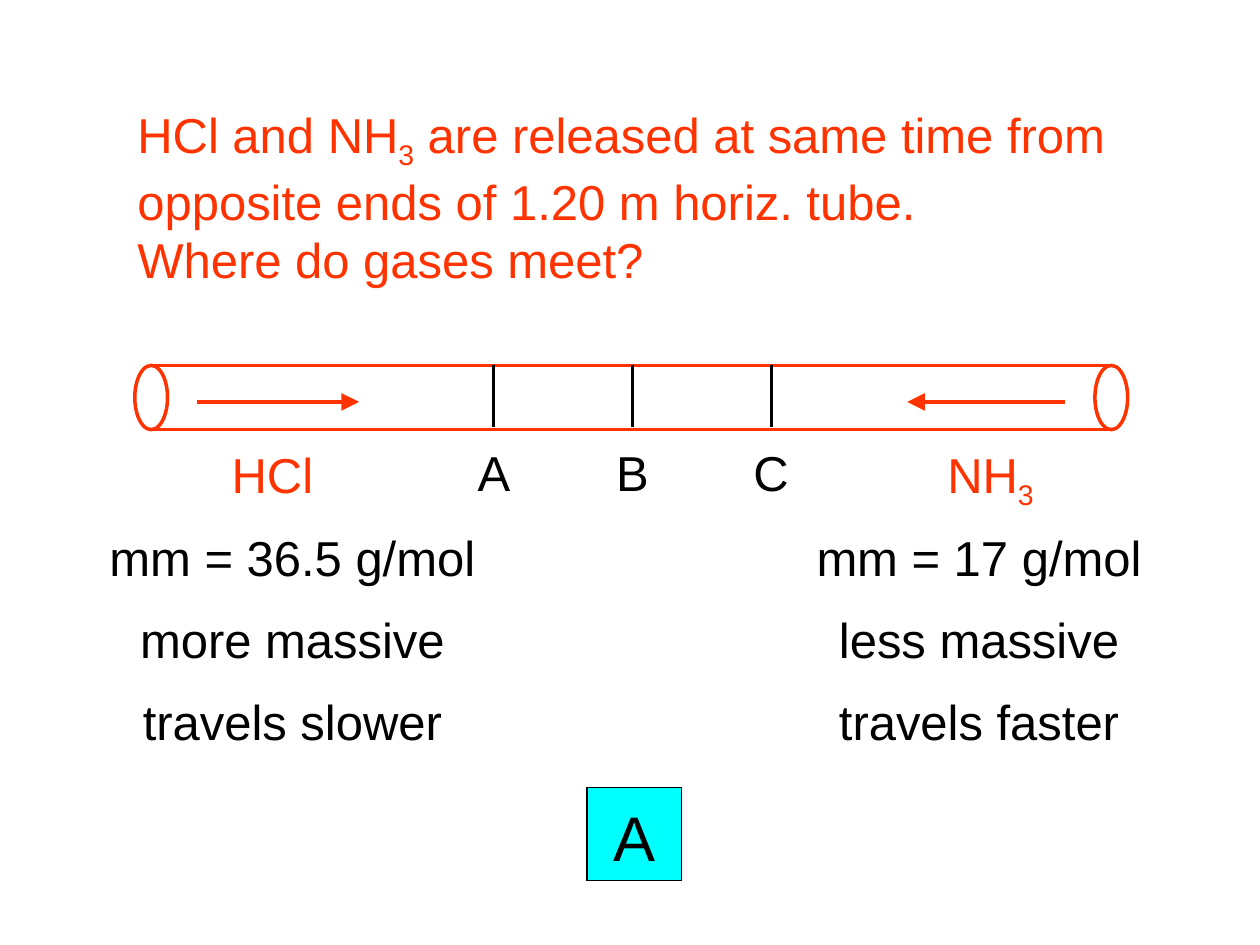
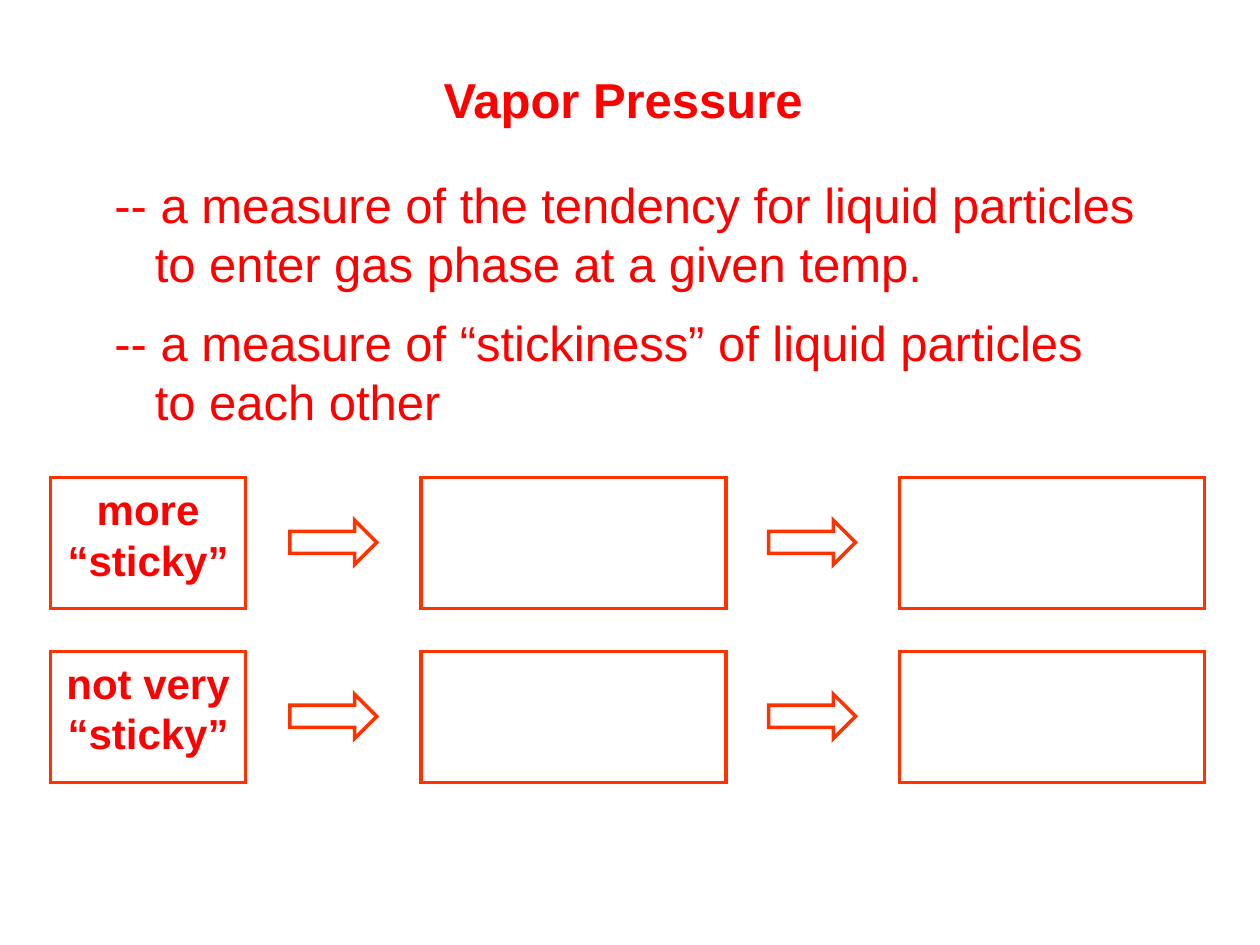
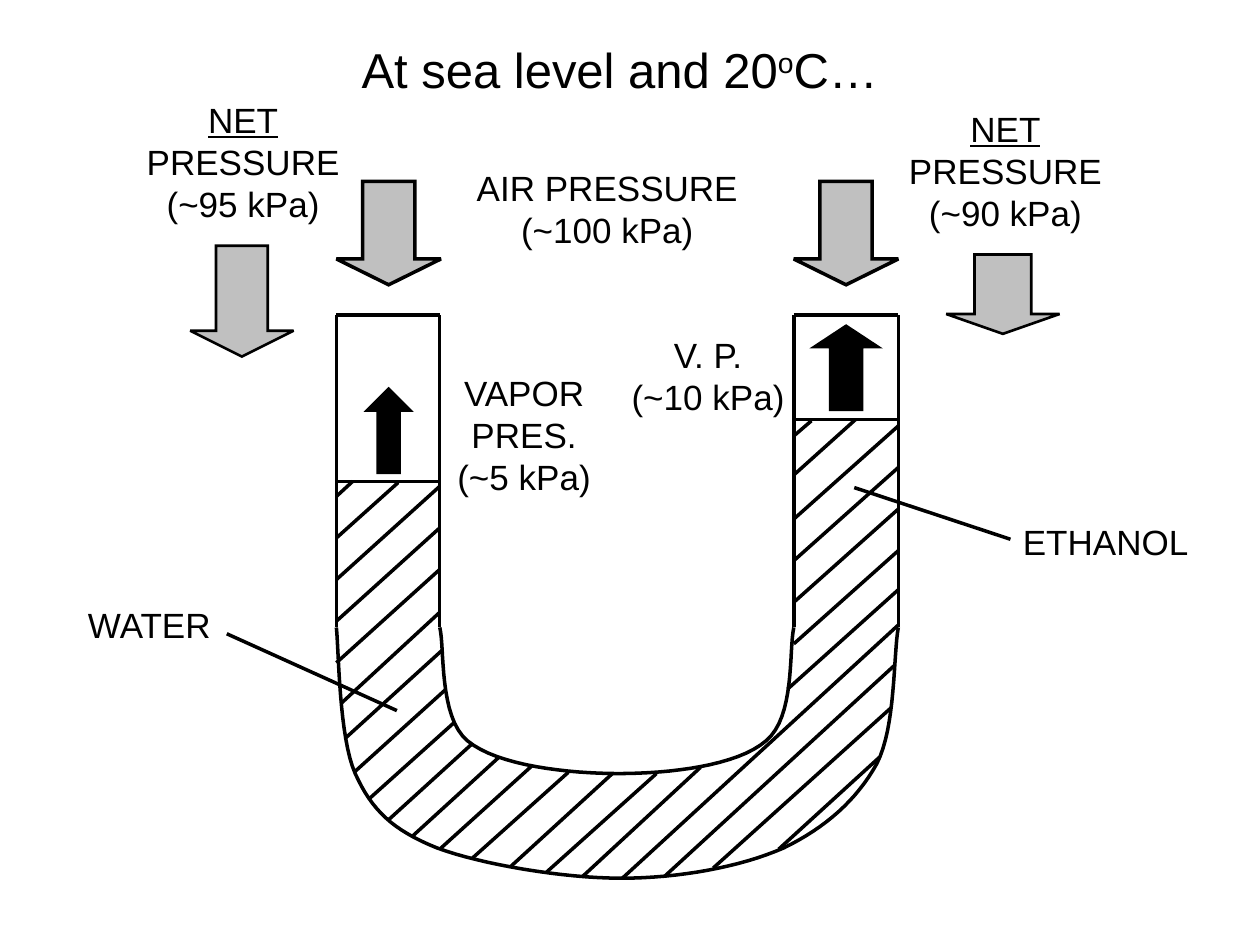
import pptx
import pptx.util
import pptx.dml.color
import pptx.enum.text
import pptx.enum.shapes
import pptx.oxml.ns
import lxml.etree

# Shared look; the slide is a grid of 10 columns by 7.5 rows, one inch each
FONT = "Arial"
BLACK, WHITE, ORANGE, RED = "000000", "FFFFFF", "FF3300", "FF0000"
GREY, CYAN = "C0C0C0", "00FFFF"
COLS, ROWS = 10, 7.5
TITLE_SIZE, LABEL_SIZE = 28, 20
SUB, SUPER, UNDERLINE = {"baseline": "-25000"}, {"baseline": "30000"}, {"u": "sng"}
ALIGN = pptx.enum.text.PP_ALIGN
ANCHOR = pptx.enum.text.MSO_ANCHOR
SHAPE = pptx.enum.shapes.MSO_SHAPE


def inch(n):
    return pptx.util.Inches(n)


def color(hex_code):
    return pptx.dml.color.RGBColor.from_string(hex_code)


def add_xml(parent, tag, **attributes):
    lxml.etree.SubElement(parent, pptx.oxml.ns.qn(tag), attributes)


def write(sp, lines, size=TITLE_SIZE, ink=BLACK, bold=False, align=ALIGN.CENTER,
          anchor=ANCHOR.TOP, wrap=False, hang=0):
    """Each line is a string or a list of strings and (string, attributes) runs."""
    tf = sp.text_frame
    tf.auto_size = pptx.enum.text.MSO_AUTO_SIZE.NONE
    tf.word_wrap, tf.vertical_anchor = wrap, anchor
    for i, line in enumerate(lines):
        p = tf.add_paragraph() if i else tf.paragraphs[0]
        p.alignment = align
        if i and hang:
            p._p.get_or_add_pPr().set("marL", str(inch(hang)))
        for part in [line] if isinstance(line, str) else line:
            text, attributes = (part, {}) if isinstance(part, str) else part
            r = p.add_run()
            r.text = text
            r.font.name, r.font.size, r.font.bold = FONT, pptx.util.Pt(size), bold
            r.font.color.rgb = color(ink)
            for name, value in attributes.items():
                r._r.get_or_add_rPr().set(name, value)


def add_text(s, at, lines, **fmt):
    sp = s.shapes.add_textbox(*map(inch, at))
    write(sp, lines, **fmt)


def add_title_slide(prs, at, lines, **fmt):
    s = prs.slides.add_slide(prs.slide_layouts[5])
    sp = s.shapes.title
    sp.left, sp.top, sp.width, sp.height = map(inch, at)
    write(sp, lines, anchor=ANCHOR.MIDDLE, **fmt)
    return s


def outline(sp, ink, weight):
    sp.line.color.rgb = color(ink)
    sp.line.width = pptx.util.Pt(weight)
    add_xml(sp.line._get_or_add_ln(), "a:miter", lim="800000")


def add_shape(s, kind, at, fill=None, ink=BLACK, weight=2, adj=()):
    sp = s.shapes.add_shape(kind, *map(inch, at))
    sp.shadow.inherit = False
    if fill:
        sp.fill.solid()
        sp.fill.fore_color.rgb = color(fill)
    else:
        sp.fill.background()
    outline(sp, ink, weight)
    for i, value in enumerate(adj):
        sp.adjustments[i] = value
    return sp


def add_line(s, x1, y1, x2, y2, ink=BLACK, weight=2, arrow=False):
    kind = pptx.enum.shapes.MSO_CONNECTOR.STRAIGHT
    c = s.shapes.add_connector(kind, *map(inch, (x1, y1, x2, y2)))
    outline(c, ink, weight)
    if arrow:
        add_xml(c.line._get_or_add_ln(), "a:tailEnd", type="triangle", w="lg", len="lg")
    add_xml(c._element.spPr, "a:effectLst")


def add_curve(s, start, beziers, steps=16):
    """Draw an open smooth line through cubic segments."""
    points, p0 = [], start
    for x1, y1, x2, y2, x3, y3 in beziers:
        corners = (p0, (x1, y1), (x2, y2), (x3, y3))
        for k in range(1, steps + 1):
            t = k / steps
            weights = ((1 - t) ** 3, 3 * t * (1 - t) ** 2, 3 * t * t * (1 - t), t ** 3)
            points.append(tuple(inch(sum(w * c[axis] for w, c in zip(weights, corners)))
                                for axis in (0, 1)))
        p0 = (x3, y3)
    builder = s.shapes.build_freeform(*map(inch, start))
    builder.add_line_segments(points, close=False)
    sp = builder.convert_to_shape()
    sp.shadow.inherit = False
    sp.fill.background()
    outline(sp, BLACK, 2)


def gas_tube_slide(prs):
    s = add_title_slide(prs, (0.99, 0.81, 7.93, 1.5), [
        ["HCl and NH", ("3", SUB), " are released at same time from"],
        "opposite ends of 1.20 m horiz. tube.",
        "Where do gases meet?"], ink=ORANGE, align=ALIGN.LEFT)

    # Tube with the two gases
    top, bottom = 2.9, 3.41
    for x in (1.07, 8.69):
        add_shape(s, SHAPE.OVAL, (x, top, 0.26, bottom - top), fill=WHITE, ink=ORANGE)
    for y in (top, bottom):
        add_line(s, 1.2, y, 8.82, y, ink=ORANGE)
    for x1, x2 in ((1.56, 2.85), (8.45, 7.2)):
        add_line(s, x1, 3.19, x2, 3.19, ink=ORANGE, arrow=True)
    for x, gas in ((1.74, ["HCl"]), (7.42, ["NH", ("3", SUB)])):
        add_text(s, (x, 3.48, 1, 0.6), [gas], ink=ORANGE, align=ALIGN.LEFT, wrap=True)

    # Possible meeting points
    for i, mark in enumerate("ABC"):
        x = 3.92 + 1.1 * i
        add_line(s, x, top, x, bottom - 0.02, weight=1.75)
        add_text(s, (x - 0.23, 3.46, 0.46, 0.57), [mark])

    # Comparison of the gases
    facts = {2.32: ("mm = 36.5 g/mol", "more massive", "travels slower"),
             7.77: ("mm = 17 g/mol", "less massive", "travels faster")}
    for center, column in facts.items():
        for i, fact in enumerate(column):
            add_text(s, (center - 1.55, 4.14 + 0.65 * i, 3.1, 0.57), [fact])

    # Answer
    add_shape(s, SHAPE.RECTANGLE, (4.66, 6.25, 0.75, 0.74), fill=CYAN, weight=0.75)
    add_text(s, (4.77, 6.29, 0.53, 0.7), ["A"], size=36)


def vapor_pressure_slide(prs):
    s = add_title_slide(prs, (3.42, 0.5, 3.19, 0.57), ["Vapor Pressure"],
                        ink=RED, bold=True, align=ALIGN.LEFT)
    # Definitions
    definitions = (
        (1.34, 8.32, ["-- a measure of the tendency for liquid particles",
                      "to enter gas phase at a given temp."]),
        (2.43, 7.91, ["-- a measure of “stickiness” of liquid particles",
                      "to each other"]))
    for y, width, lines in definitions:
        add_text(s, (0.81, y, width, 1.03), lines, ink=RED, align=ALIGN.LEFT,
                 anchor=ANCHOR.MIDDLE, hang=0.32)

    # Two rows: first box, then an arrow and an empty box twice
    for row, cause in enumerate(("more", "not very")):
        y = 3.79 + 1.38 * row
        first = add_shape(s, SHAPE.RECTANGLE, (0.4, y, 1.55, 1.04), ink=ORANGE)
        write(first, [cause, "“sticky”"], size=24, ink=RED, bold=True)
        for step in range(2):
            x = 2.3 + 3.8 * step
            add_shape(s, SHAPE.RIGHT_ARROW, (x, y + 0.34, 0.69, 0.35), ink=ORANGE)
            add_shape(s, SHAPE.RECTANGLE, (x + 1.04, y, 2.42, 1.04), ink=ORANGE)


def draw_u_tube(s):
    left, right = (2.67, 3.49), (6.3, 7.13)
    top, bend = 2.5, 4.98
    for (x1, x2), level in ((left, 3.82), (right, 3.33)):
        for x in (x1, x2):
            add_line(s, x, top, x, bend)
        for y in (top, level):
            add_line(s, x1, y, x2, y)
    add_curve(s, (3.49, bend), [
        (3.53, 5.13, 3.48, 5.69, 3.71, 5.88), (3.95, 6.08, 4.52, 6.14, 4.91, 6.14),
        (5.31, 6.14, 5.85, 6.08, 6.08, 5.88), (6.31, 5.69, 6.26, 5.17, 6.3, bend)])
    add_curve(s, (2.67, bend), [
        (2.69, 5.17, 2.69, 5.85, 2.82, 6.14), (2.95, 6.43, 3.12, 6.59, 3.47, 6.73),
        (3.82, 6.86, 4.47, 6.97, 4.93, 6.97), (5.39, 6.97, 5.88, 6.88, 6.22, 6.73),
        (6.55, 6.57, 6.8, 6.35, 6.96, 6.06), (7.11, 5.77, 7.09, 5.2, 7.13, bend)])

    # Hatching: equal steps across the legs
    for (x1, x2), first, count in ((left, 4.6, 3), (right, 4.12, 4)):
        for i in range(count):
            y = first + 0.33 * i
            add_line(s, x1, y, x2, y - 0.74)
    # Hatching: strokes cut short by the liquid levels and the bend
    for stroke in (
            (2.67, 3.94, 2.8, 3.82), (2.67, 4.27, 3.16, 3.83), (2.71, 5.58, 3.49, 4.86),
            (2.74, 5.86, 3.51, 5.16), (2.81, 6.13, 3.54, 5.47), (2.93, 6.34, 3.61, 5.73),
            (3.08, 6.51, 3.74, 5.91), (3.27, 6.64, 3.96, 6.01), (3.49, 6.74, 4.22, 6.08),
            (3.75, 6.81, 4.51, 6.13), (4.05, 6.88, 4.86, 6.14), (4.34, 6.92, 5.21, 6.14),
            (4.62, 6.96, 5.56, 6.09), (4.94, 6.97, 7.13, 4.96), (5.28, 6.95, 7.1, 5.28),
            (5.66, 6.89, 7.07, 5.62), (6.18, 6.74, 6.98, 6.01), (6.25, 5.47, 7.13, 4.68),
            (6.3, 3.77, 6.79, 3.33), (6.3, 3.46, 6.44, 3.34)):
        add_line(s, *stroke)


def sea_level_slide(prs):
    s = add_title_slide(prs, (2.77, 0.26, 4.33, 0.57),
                        [["At sea level and 20", ("o", SUPER), "C…"]], align=ALIGN.LEFT)
    draw_u_tube(s)

    # Air and net pressure push down, vapor pressure pushes up
    for at, weight in (((2.67, 1.44, 0.83, 0.82), 2), ((6.3, 1.44, 0.83, 0.82), 2),
                       ((1.51, 1.95, 0.82, 0.88), 1.5), ((7.51, 2.02, 0.9, 0.63), 1.5)):
        add_shape(s, SHAPE.DOWN_ARROW, at, fill=GREY, weight=weight, adj=(0.5, 0.25))
    for at, head in (((2.92, 3.09, 0.33, 0.66), 0.5), ((6.47, 2.59, 0.49, 0.66), 0.33)):
        add_shape(s, SHAPE.UP_ARROW, at, fill=BLACK, adj=(0.5, head))

    # Labels and leaders
    net = [[("NET", UNDERLINE)], "PRESSURE"]
    for at, lines in (
            ((0.8, 0.73, 2.26, 1.22), net + ["(~95 kPa)"]),
            ((6.85, 0.8, 2.26, 1.12), net + ["(~90 kPa)"]),
            ((3.5, 1.27, 2.64, 0.82), ["AIR PRESSURE", "(~100 kPa)"]),
            ((3.46, 2.9, 1.4, 1.12), ["VAPOR", "PRES.", "(~5 kPa)"]),
            ((4.84, 2.6, 1.56, 0.8), ["V. P.", "(~10 kPa)"]),
            ((0.03, 4.74, 2.31, 0.66), ["WATER"]),
            ((7.62, 4.08, 2.31, 0.66), ["ETHANOL"])):
        add_text(s, at, lines, size=LABEL_SIZE, wrap=True)
    add_line(s, 1.8, 5.03, 3.15, 5.64)
    add_line(s, 8.02, 4.28, 6.78, 3.87)


def main():
    prs = pptx.Presentation()
    prs.slide_width, prs.slide_height = inch(COLS), inch(ROWS)
    gas_tube_slide(prs)
    vapor_pressure_slide(prs)
    sea_level_slide(prs)
    prs.save("out.pptx")


if __name__ == "__main__":
    main()
